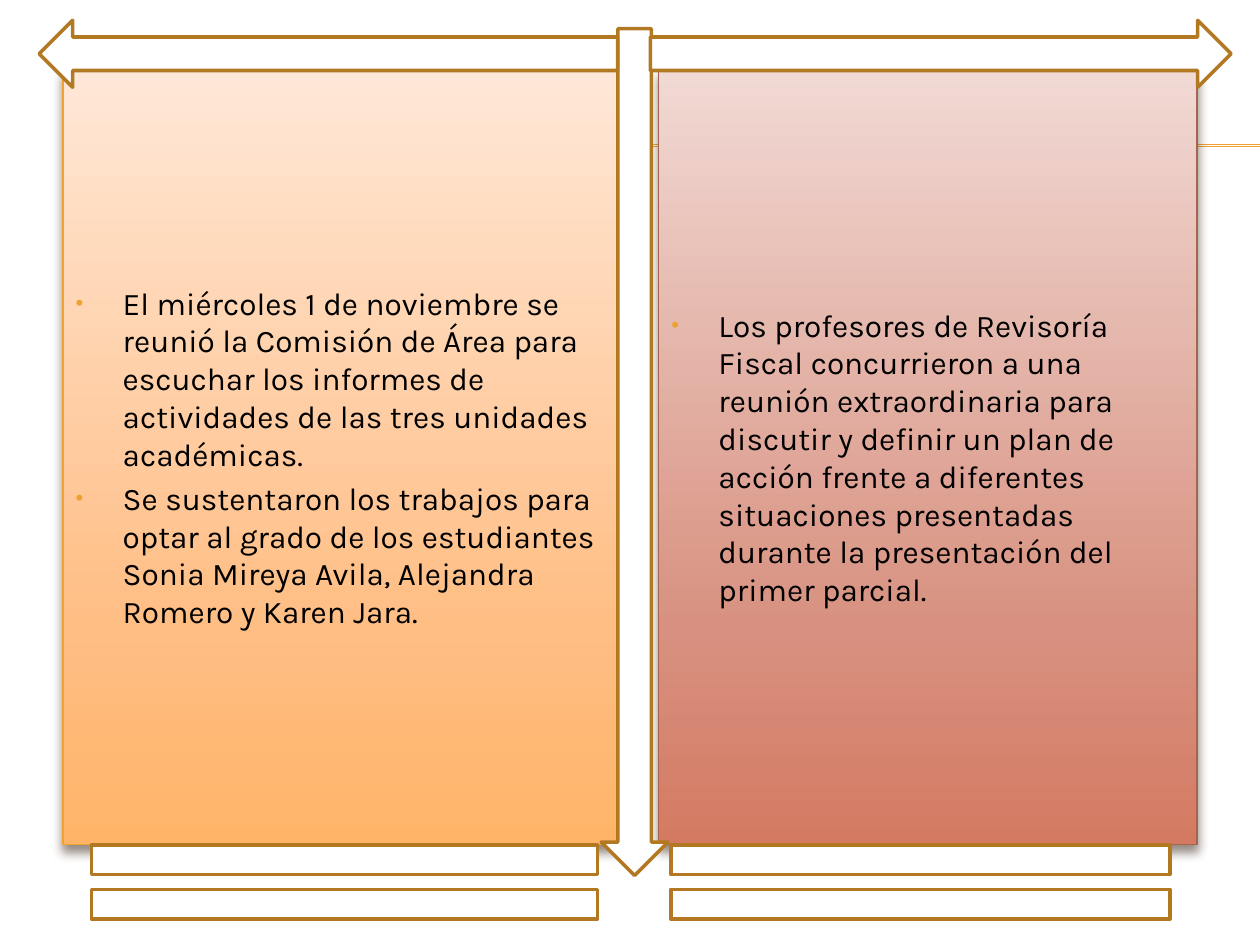
from lxml import etree
from pptx import Presentation
from pptx import util as u
from pptx.dml.color import RGBColor
from pptx.enum import shapes, text
from pptx.oxml import parse_xml
from pptx.oxml.ns import nsdecls, qn


def color(value):
    return RGBColor.from_string(value)


def add_text(frame, content, size=18, font="Karla", ink="000000", bullet="F0A22E", first=False):
    paragraph = frame.paragraphs[0] if first else frame.add_paragraph()
    paragraph.alignment = text.PP_ALIGN.LEFT
    paragraph.space_before = u.Pt(size * 0.2)
    run = paragraph.add_run()
    run.text = content
    run.font.size, run.font.name = u.Pt(size), font
    run.font.color.rgb = color(ink)
    properties = paragraph._p.get_or_add_pPr()
    properties.set("marL", str(u.Cm(0.95)))
    properties.set("indent", str(u.Cm(-0.95)))
    for xml in (
        f'<a:buClr {nsdecls("a")}><a:srgbClr val="{bullet}"/></a:buClr>',
        f'<a:buSzPct {nsdecls("a")} val="70000"/>',
        f'<a:buFont {nsdecls("a")} typeface="Arial"/>',
        f'<a:buChar {nsdecls("a")} char="•"/>',
    ):
        properties.append(parse_xml(xml))


presentation = Presentation()
presentation.slide_width, presentation.slide_height = u.Cm(25.4), u.Cm(19.05)
slide = presentation.slides.add_slide(presentation.slide_layouts[3])
tree = slide.shapes.title.element.getparent()
tree.remove(slide.shapes.title.element)

for y in (2.92, 2.95):
    rule = slide.shapes.add_connector(shapes.MSO_CONNECTOR.STRAIGHT, u.Cm(1.42), u.Cm(y), u.Cm(25.4), u.Cm(y))
    rule.line.color.rgb = color("F0A22E")
    rule.line.width = u.Pt(0.75)
    etree.SubElement(rule.element.spPr, qn("a:effectLst"))

panels = [
    (1.27, 11.23, "F0A22E", ("FFE7D7", "FFBE84", "FFB468"), [
        "El miércoles 1 de noviembre se reunió la Comisión de Área para escuchar los informes de "
        "actividades de las tres unidades académicas.",
        "Se sustentaron los trabajos para optar al grado de los estudiantes Sonia Mireya Avila, "
        "Alejandra Romero y Karen Jara.",
    ]),
    (13.28, 10.85, "A5644E", ("F1D9D4", "D89180", "D47A62"), [
        "Los profesores de Revisoría Fiscal concurrieron a una reunión extraordinaria para discutir y "
        "definir un plan de acción frente a diferentes situaciones presentadas durante la presentación "
        "del primer parcial.",
    ]),
]
for index, (left, width, outline, gradient, contents) in enumerate(panels, start=1):
    panel = slide.placeholders[index]
    tree.append(panel.element)
    panel.left, panel.top, panel.width, panel.height = u.Cm(left), u.Cm(1.4), u.Cm(width), u.Cm(15.62)
    panel.fill.gradient()
    panel.fill.gradient_angle = 270
    stops = panel.element.spPr.find(".//" + qn("a:gsLst"))
    for stop in list(stops):
        stops.remove(stop)
    for position, value in zip((0, 72, 100), gradient):
        stops.append(parse_xml(
            f'<a:gs {nsdecls("a")} pos="{position * 1000}"><a:srgbClr val="{value}"/></a:gs>'))
    panel.line.color.rgb = color(outline)
    panel.line.width = u.Pt(0.79)
    panel.element.spPr.append(parse_xml(
        f'<a:effectLst {nsdecls("a")}><a:outerShdw blurRad="{u.Pt(6)}" dist="{u.Pt(4)}" dir="5400000" '
        'rotWithShape="0"><a:srgbClr val="4E3B30"><a:alpha val="60000"/></a:srgbClr>'
        '</a:outerShdw></a:effectLst>'))
    frame = panel.text_frame
    frame.word_wrap = True
    frame.auto_size = text.MSO_AUTO_SIZE.NONE
    frame.vertical_anchor = text.MSO_ANCHOR.MIDDLE
    for number, content in enumerate(contents):
        add_text(frame, content, first=number == 0)

kinds = shapes.MSO_SHAPE
for kind, left, top, width, height in (
    (kinds.DOWN_ARROW, 12.12, 0.58, 1.35, 17.07),
    (kinds.RIGHT_ARROW, 13.11, 0.41, 11.71, 1.35),
    (kinds.LEFT_ARROW, 0.79, 0.41, 11.66, 1.35),
    (kinds.MATH_EQUAL, 0, 16.51, 13.89, 2.54),
    (kinds.MATH_EQUAL, 11.71, 16.51, 13.69, 2.54),
):
    shape = slide.shapes.add_shape(kind, u.Cm(left), u.Cm(top), u.Cm(width), u.Cm(height))
    shape.shadow.inherit = False
    shape.fill.solid()
    shape.fill.fore_color.rgb = color("FFFFFF")
    shape.line.color.rgb = color("B27822")
    shape.line.width = u.Pt(2)

presentation.save("out.pptx")
